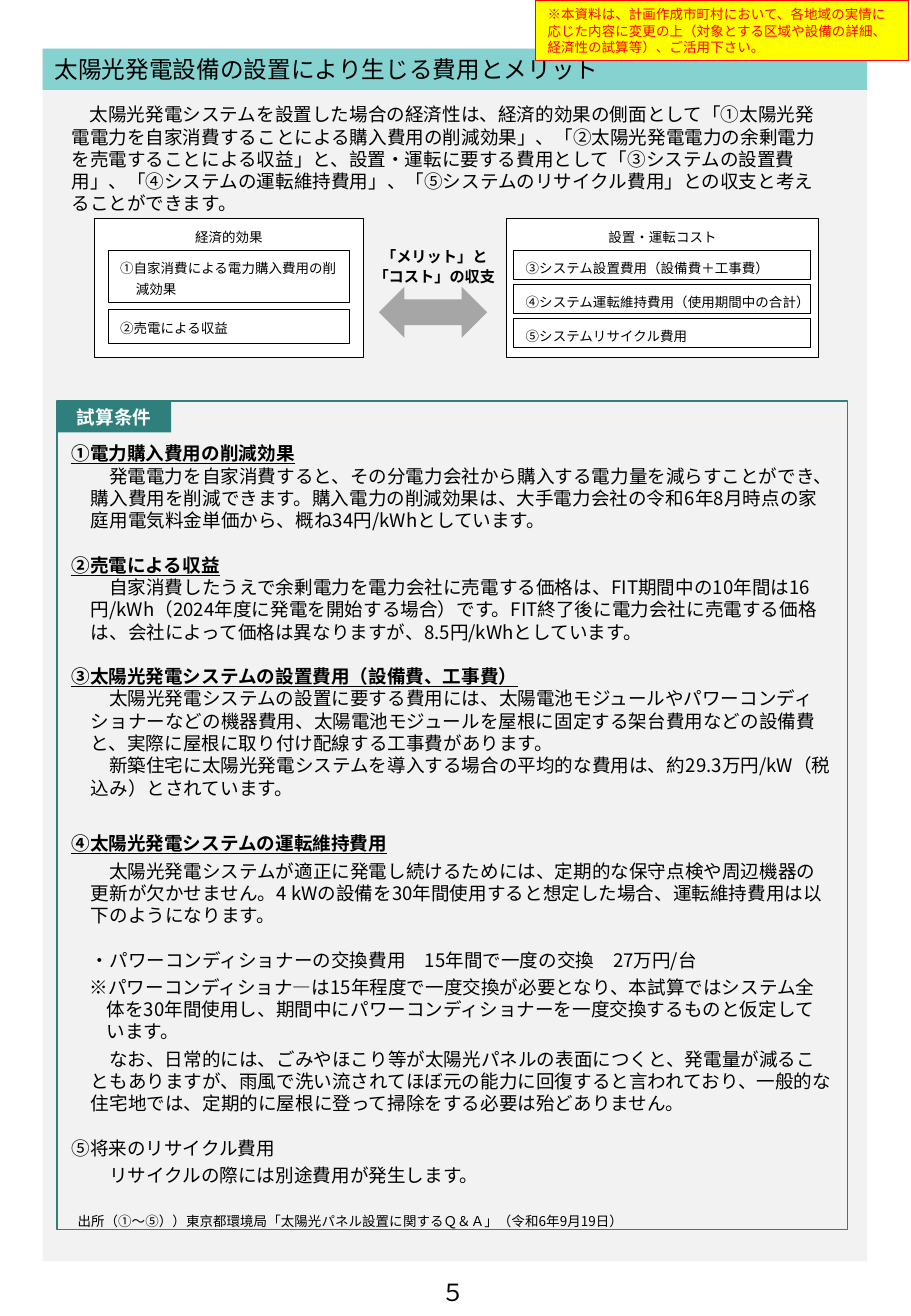
import lxml.etree
import pptx
import pptx.dml.color
import pptx.enum.shapes
import pptx.enum.text
import pptx.oxml.ns
import pptx.util

Inches = pptx.util.Inches
Pt = pptx.util.Pt
SHAPE = pptx.enum.shapes.MSO_SHAPE
ALIGN = pptx.enum.text.PP_ALIGN
ANCHOR = pptx.enum.text.MSO_ANCHOR


class Theme:
    font = "Noto Sans CJK JP"
    black, white, red = "000000", "FFFFFF", "FF0000"
    panel, banner, teal = "F2F2F2", "85D2D0", "2F7F7D"
    arrow, notice = "A6A6A6", "FFFF00"
    title, body, label, small = 14, 11, 9, 8
    leading = 1.2
    box_line = 12


# Paragraph formats for the explanatory text; left and first are in inches
HEADING = dict(bold=True, underline=True)
BODY = dict(left=0.16, first=0.15)

INTRO = (
    "太陽光発電システムを設置した場合の経済性は、経済的効果の側面として「①太陽光発電電力を自家消費することによる購入費用の削減効果」、"
    "「②太陽光発電電力の余剰電力を売電することによる収益」と、設置・運転に要する費用として「③システムの設置費用」、"
    "「④システムの運転維持費用」、「⑤システムのリサイクル費用」との収支と考えることができます。")

BENEFIT_TERMS = [
    ("①電力購入費用の削減効果", HEADING),
    ("発電電力を自家消費すると、その分電力会社から購入する電力量を減らすことができ、購入費用を削減できます。"
     "購入電力の削減効果は、大手電力会社の令和6年8月時点の家庭用電気料金単価から、概ね34円/kWhとしています。", BODY),
    ("②売電による収益", dict(HEADING, before=13.2)),
    ("自家消費したうえで余剰電力を電力会社に売電する価格は、FIT期間中の10年間は16円/kWh（2024年度に発電を開始する場合）です。"
     "FIT終了後に電力会社に売電する価格は、会社によって価格は異なりますが、8.5円/kWhとしています。", BODY),
    ("③太陽光発電システムの設置費用（設備費、工事費）", dict(HEADING, before=13.2)),
    ("太陽光発電システムの設置に要する費用には、太陽電池モジュールやパワーコンディショナーなどの機器費用、"
     "太陽電池モジュールを屋根に固定する架台費用などの設備費と、実際に屋根に取り付け配線する工事費があります。", BODY),
    ("新築住宅に太陽光発電システムを導入する場合の平均的な費用は、約29.3万円/kW（税込み）とされています。", BODY),
]

UPKEEP_TERMS = [
    ("④太陽光発電システムの運転維持費用", HEADING),
    ("太陽光発電システムが適正に発電し続けるためには、定期的な保守点検や周辺機器の更新が欠かせません。"
     "4 kWの設備を30年間使用すると想定した場合、運転維持費用は以下のようになります。", dict(BODY, before=3)),
    ("・パワーコンディショナーの交換費用　15年間で一度の交換　27万円/台", dict(left=0.16, before=13)),
    ("※パワーコンディショナ―は15年程度で一度交換が必要となり、本試算ではシステム全体を30年間使用し、"
     "期間中にパワーコンディショナーを一度交換するものと仮定しています。", dict(left=0.29, first=-0.14, before=3)),
    ("なお、日常的には、ごみやほこり等が太陽光パネルの表面につくと、発電量が減ることもありますが、"
     "雨風で洗い流されてほぼ元の能力に回復すると言われており、一般的な住宅地では、"
     "定期的に屋根に登って掃除をする必要は殆どありません。", dict(BODY, before=3)),
    ("⑤将来のリサイクル費用", dict(before=13.2)),
    ("リサイクルの際には別途費用が発生します。", dict(left=0.31, before=3)),
    ("出所（①～⑤））東京都環境局「太陽光パネル設置に関するＱ＆Ａ」（令和6年9月19日）",
     dict(left=0.05, before=12, size=Theme.small, line=13.2)),
]


def rgb(value):
    return pptx.dml.color.RGBColor.from_string(value)


def format_para(para, text, size=Theme.body, color=Theme.black, bold=False, underline=False,
                align=ALIGN.LEFT, line=None, before=0, left=0, first=0):
    """Write one paragraph with its indents, spacing and font."""
    formats = dict(alignment=align, space_before=Pt(before), space_after=Pt(0),
                   line_spacing=Pt(line or round(size * Theme.leading, 1)))
    for name, value in formats.items():
        setattr(para, name, value)
    properties = para._p.get_or_add_pPr()
    for name, value in dict(marL=left, indent=first).items():
        properties.set(name, str(Inches(value)))
    span = para.add_run()
    span.text = text
    span.font.color.rgb = rgb(color)
    for name, value in dict(size=Pt(size), bold=bold, underline=underline, name=Theme.font).items():
        setattr(span.font, name, value)
    east_asian = lxml.etree.SubElement(span._r.get_or_add_rPr(), pptx.oxml.ns.qn("a:ea"))
    east_asian.set("typeface", Theme.font)


def write(box, paras, anchor=ANCHOR.TOP, margin_right=0.1, **shared):
    """Fill a box with (text, format) pairs; shared formats apply to all."""
    frame = box.text_frame
    formats = dict(word_wrap=True, auto_size=pptx.enum.text.MSO_AUTO_SIZE.NONE,
                   vertical_anchor=anchor, margin_left=Inches(0.1), margin_right=Inches(margin_right),
                   margin_top=Inches(0.05), margin_bottom=Inches(0.05))
    for name, value in formats.items():
        setattr(frame, name, value)
    for index, (text, style) in enumerate(paras):
        para = frame.add_paragraph() if index else frame.paragraphs[0]
        format_para(para, text, **{**shared, **style})


def add_block(page, box, fill=None, line=None, weight=0.5, kind=SHAPE.RECTANGLE):
    block = page.shapes.add_shape(kind, *map(Inches, box))
    block.shadow.inherit = False
    if fill:
        block.fill.solid()
        block.fill.fore_color.rgb = rgb(fill)
    else:
        block.fill.background()
    if line:
        block.line.color.rgb = rgb(line)
        block.line.width = Pt(weight)
    else:
        block.line.fill.background()
    return block


def add_text(page, box, paras, **formats):
    write(page.shapes.add_textbox(*map(Inches, box)), paras, **formats)


def add_header(page, left, top, width, height):
    """Grey page panel with the title band across its top."""
    add_block(page, (left, top, width, height), Theme.panel)
    title = page.shapes.title
    page.shapes._spTree.append(title._element)  # raise the title above the panel
    for name, value in dict(left=left, top=top, width=width, height=0.34).items():
        setattr(title, name, Inches(value))
    title.fill.solid()
    title.fill.fore_color.rgb = rgb(Theme.banner)
    write(title, [("太陽光発電設備の設置により生じる費用とメリット", {})], ANCHOR.MIDDLE, size=Theme.title)
    add_text(page, (left + 0.14, top + 0.4, 6.46, 1.03), [(INTRO, dict(first=0.15))])


def add_group_box(page, box, heading, item_left, item_width, items):
    """Framed heading holding item boxes, each given as (offset, height, text, format)."""
    left, top = box[:2]
    shared = dict(size=Theme.small, line=Theme.box_line)
    frame = add_block(page, box, Theme.white, Theme.black)
    write(frame, [(heading, dict(align=ALIGN.CENTER))], **shared)
    for offset, height, text, style in items:
        item = add_block(page, (left + item_left, top + offset, item_width, height), Theme.white, Theme.black)
        write(item, [(text, style)], margin_right=0, **shared)


def add_balance(page, left, top, height):
    """Benefits and costs on either side of a two-way arrow."""
    add_group_box(page, (left, top, 2.21, height), "経済的効果", 0.11, 1.99, [
        (0.26, 0.43, "①自家消費による電力購入費用の削減効果", dict(left=0.13, first=-0.13)),
        (0.75, 0.28, "②売電による収益", {})])
    costs = ["③システム設置費用（設備費＋工事費）", "④システム運転維持費用（使用期間中の合計）", "⑤システムリサイクル費用"]
    add_group_box(page, (left + 3.39, top, 2.57, height), "設置・運転コスト", 0.06, 2.44,
                  [(0.26 + 0.28 * row, 0.24, text, {}) for row, text in enumerate(costs)])
    add_block(page, (left + 2.34, top + 0.56, 0.89, 0.42), Theme.arrow, kind=SHAPE.LEFT_RIGHT_ARROW)
    add_text(page, (left + 2.14, top + 0.17, 1.31, 0.5), [("「メリット」と", {}), ("「コスト」の収支", {})],
             size=Theme.label, bold=True, line=Theme.box_line, align=ALIGN.CENTER)


def add_conditions(page, left, top, width, height):
    """Outlined section with a tab label and the estimate conditions."""
    add_text(page, (left + 0.02, top + 0.29, 6.46, 3.2), BENEFIT_TERMS)
    add_text(page, (left + 0.02, top + 3.5, 6.46, 3.4), UPKEEP_TERMS)
    tab = add_block(page, (left, top, 0.94, 0.26), Theme.teal)
    write(tab, [("試算条件", {})], ANCHOR.MIDDLE, color=Theme.white, bold=True, align=ALIGN.CENTER)
    add_block(page, (left, top, width, height), line=Theme.teal, weight=0.75)


def add_notice(page, *box):
    notice = add_block(page, box, Theme.notice, Theme.red, 0.75)
    text = ("※本資料は、計画作成市町村において、各地域の実情に応じた内容に変更の上"
            "（対象とする区域や設備の詳細、経済性の試算等）、ご活用下さい。")
    write(notice, [(text, {})], size=Theme.small, color=Theme.red, line=9.8)


def main():
    deck = pptx.Presentation()
    deck.slide_width, deck.slide_height = Inches(7.5), Inches(10.83)
    page = deck.slides.add_slide(deck.slide_layouts[5])
    add_header(page, 0.35, 0.4, 6.79, 9.98)
    add_balance(page, 0.78, 1.8, 1.14)
    add_conditions(page, 0.47, 3.3, 6.51, 6.82)
    add_notice(page, 4.41, 0, 3.07, 0.5)
    # Page number
    add_text(page, (3.53, 10.47, 0.4, 0.34), [("５", {})], size=Theme.title, align=ALIGN.CENTER)
    deck.save("out.pptx")


if __name__ == "__main__":
    main()
